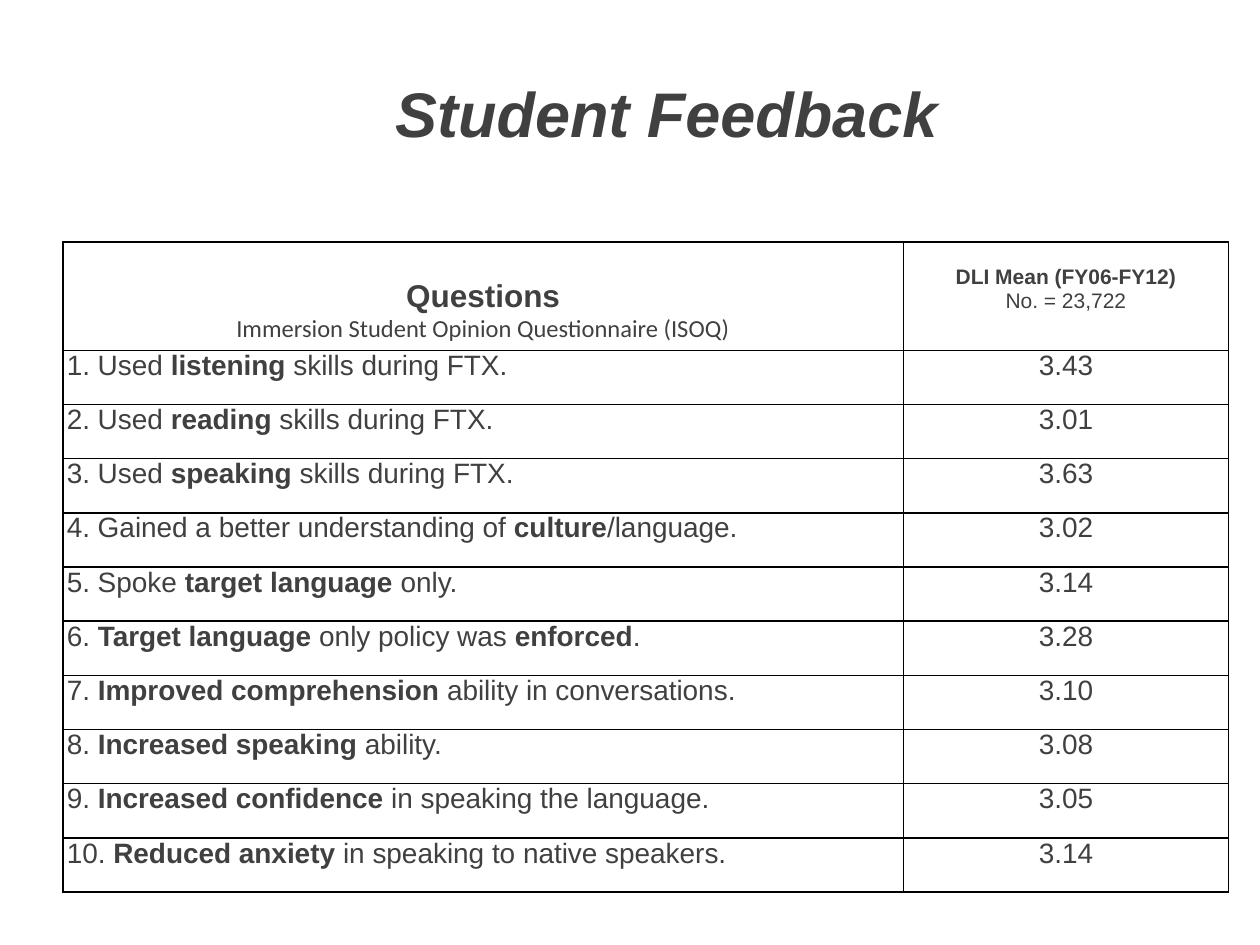
from lxml.etree import SubElement
from pptx import Presentation
from pptx.dml.color import RGBColor
from pptx.enum.text import MSO_ANCHOR, PP_ALIGN
from pptx.oxml.ns import qn
from pptx.util import Inches, Pt

COLORS = {"text": "404040", "border": "000000"}
QUESTIONS = [
    ("1. Used **listening** skills during FTX.", "3.43"),
    ("2. Used **reading** skills during FTX.", "3.01"),
    ("3. Used **speaking** skills during FTX.", "3.63"),
    ("4. Gained a better understanding of **culture**/language.", "3.02"),
    ("5. Spoke **target language **only.", "3.14"),
    ("6. **Target language **only policy was **enforced**.", "3.28"),
    ("7. **Improved comprehension **ability in conversations.", "3.10"),
    ("8. **Increased speaking **ability.", "3.08"),
    ("9. **Increased confidence **in speaking the language.", "3.05"),
    ("10. **Reduced anxiety** in speaking to native speakers.", "3.14"),
]
COLUMN_WIDTHS = (6.67, 2.58)
HEADER_HEIGHT = 0.86
ROW_HEIGHT = 0.43


def write_text(para, text, size=16, font="Arial", italic=False, align=PP_ALIGN.LEFT):
    """Fill a paragraph; parts between ** marks are bold."""
    para.alignment = align
    for index, part in enumerate(text.split("**")):
        if part:
            span = para.add_run()
            span.text = part
            span.font.name = font
            span.font.size = Pt(size)
            span.font.bold = index % 2 == 1
            span.font.italic = italic
            span.font.color.rgb = RGBColor.from_string(COLORS["text"])


def format_cell(cell, top=0):
    """Set the margins, black borders and empty fill of a cell."""
    cell.margin_left = cell.margin_right = Inches(0.03)
    cell.margin_top, cell.margin_bottom = Inches(top), 0
    cell.vertical_anchor = MSO_ANCHOR.TOP
    properties = cell._tc.get_or_add_tcPr()
    for side in ("a:lnL", "a:lnR", "a:lnT", "a:lnB"):
        line = SubElement(properties, qn(side), w=str(Pt(1)))
        fill = SubElement(line, qn("a:solidFill"))
        SubElement(fill, qn("a:srgbClr"), val=COLORS["border"])
    cell.fill.background()


def write_header(cell, heading, detail, top, heading_size, detail_size, detail_font="Arial"):
    format_cell(cell, top)
    frame = cell.text_frame
    write_text(frame.paragraphs[0], f"**{heading}**", size=heading_size, align=PP_ALIGN.CENTER)
    write_text(frame.add_paragraph(), detail, size=detail_size, font=detail_font,
               align=PP_ALIGN.CENTER)


def add_title(page, text):
    title = page.shapes.title
    title.left, title.top = Inches(1), Inches(0.54)
    title.width, title.height = Inches(8.58), Inches(0.71)
    title.text_frame.vertical_anchor = MSO_ANCHOR.MIDDLE
    write_text(title.text_frame.paragraphs[0], f"**{text}**", size=36, italic=True,
               align=PP_ALIGN.CENTER)


def add_feedback_table(page):
    height = HEADER_HEIGHT + ROW_HEIGHT * len(QUESTIONS)
    table = page.shapes.add_table(len(QUESTIONS) + 1, 2, Inches(0.5), Inches(1.92),
                                  Inches(sum(COLUMN_WIDTHS)), Inches(height)).table
    table.first_row = table.horz_banding = False
    for column, width in zip(table.columns, COLUMN_WIDTHS):
        column.width = Inches(width)
    for index, row in enumerate(table.rows):
        row.height = Inches(ROW_HEIGHT if index else HEADER_HEIGHT)

    write_header(table.cell(0, 0), "Questions", "Immersion Student Opinion Questionnaire (ISOQ)",
                 top=0.29, heading_size=18, detail_size=14, detail_font="Calibri")
    write_header(table.cell(0, 1), "DLI Mean (FY06-FY12)", "No. = 23,722",
                 top=0.19, heading_size=12, detail_size=12)
    for row, values in enumerate(QUESTIONS, start=1):
        for column, align in enumerate((PP_ALIGN.LEFT, PP_ALIGN.CENTER)):
            cell = table.cell(row, column)
            format_cell(cell)
            write_text(cell.text_frame.paragraphs[0], values[column], align=align)


def main():
    deck = Presentation()
    deck.slide_width, deck.slide_height = Inches(10), Inches(7.5)
    page = deck.slides.add_slide(deck.slide_layouts[5])
    add_feedback_table(page)
    add_title(page, "Student Feedback")
    deck.save("out.pptx")


if __name__ == "__main__":
    main()
